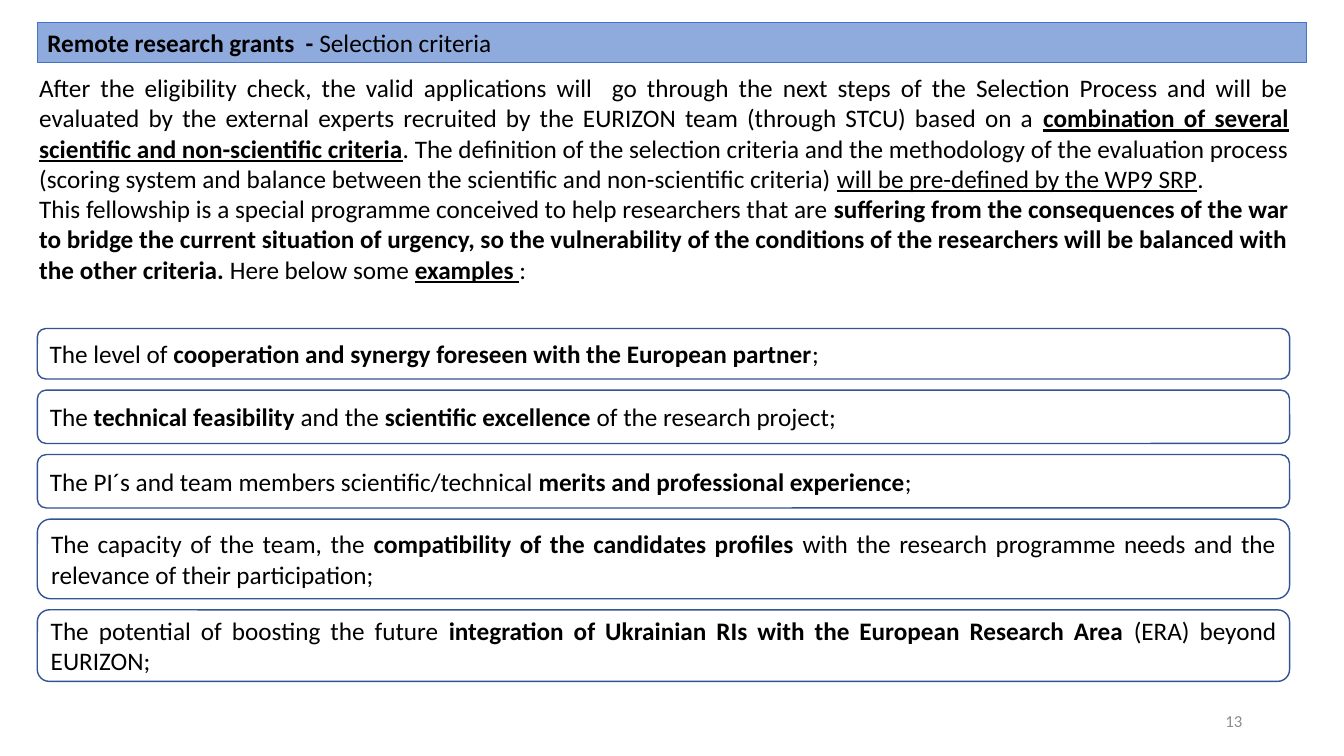
from pptx import Presentation
from pptx.dml.color import RGBColor
from pptx.enum.shapes import MSO_SHAPE
from pptx.enum.text import MSO_ANCHOR as ANCHOR, MSO_AUTO_SIZE as AUTO, PP_ALIGN as ALIGN
from pptx.util import Inches, Pt

BLACK = RGBColor(0x00, 0x00, 0x00)
GREY = RGBColor(0x8C, 0x8C, 0x8C)
BANNER_FILL = RGBColor(0x8F, 0xAA, 0xDC)
BANNER_LINE = RGBColor(0x44, 0x72, 0xC4)
BOX_LINE = RGBColor(0x32, 0x54, 0x91)
FONT = "Calibri"

# Content: each paragraph is a list of (text, style), b = bold, u = underlined
TITLE = [("Remote research grants  - ", "b"), ("Selection criteria", "")]
INTRO = [
    [
        ("After the eligibility check, the valid applications will  go through the next "
         "steps of the Selection Process and will be evaluated by the external experts "
         "recruited by the EURIZON team (through STCU) based on a ", ""),
        ("combination of several scientific and non-scientific criteria", "bu"),
        (". The definition of the selection criteria and the methodology of the "
         "evaluation process (scoring system and balance between the scientific and "
         "non-scientific criteria) ", ""),
        ("will be pre-defined by the WP9 SRP", "u"),
        (". ", ""),
    ],
    [
        ("This fellowship is a special programme conceived to help researchers that are ", ""),
        ("suffering from the consequences of the war to bridge the current situation of "
         "urgency, so the vulnerability of the conditions of the researchers will be "
         "balanced with the other criteria.", "b"),
        (" Here below some ", ""),
        ("examples ", "bu"),
        (": ", ""),
    ],
]
# Criteria: box height, runs
CRITERIA = [
    (0.5, [("The level of ", ""),
           ("cooperation and synergy foreseen with the European partner", "b"),
           (";", "")]),
    (0.53, [("The ", ""), ("technical feasibility ", "b"), ("and the ", ""),
            ("scientific excellence ", "b"), ("of the research project;", "")]),
    (0.53, [("The PI´s and team members scientific/technical ", ""),
            ("merits and professional experience", "b"), (";", "")]),
    (0.79, [("The capacity of the team, the ", ""),
            ("compatibility of the candidates profiles", "b"),
            (" with the research programme needs and the relevance of their "
             "participation;", "")]),
    (0.71, [("The potential of boosting the future ", ""),
            ("integration of Ukrainian RIs with the European Research Area ", "b"),
            ("(ERA) beyond EURIZON;", "")]),
]
PAGE_NUMBER = [("13", "")]

LEFT, FULL_W, BOX_W = 0.37, 12.59, 12.42
BOX_TOP, BOX_GAP = 3.26, 0.11


def write(sp, paragraphs, anchor=ANCHOR.MIDDLE, align=ALIGN.JUSTIFY, size=18, color=BLACK):
    tf = sp.text_frame
    tf.word_wrap = True
    tf.auto_size = AUTO.NONE
    tf.vertical_anchor = anchor
    for i, runs in enumerate(paragraphs):
        p = tf.add_paragraph() if i else tf.paragraphs[0]
        p.alignment = align
        p.line_spacing = 1.0
        for text, style in runs:
            r = p.add_run()
            r.text = text
            r.font.name = FONT
            r.font.size = Pt(size)
            r.font.color.rgb = color
            r.font.bold = "b" in style
            r.font.underline = "u" in style


prs = Presentation()
prs.slide_width, prs.slide_height = Inches(13.33), Inches(7.5)
s = prs.slides.add_slide(prs.slide_layouts[5])

# Title banner
title = s.shapes.title
title.left, title.top = Inches(LEFT), Inches(0.22)
title.width, title.height = Inches(FULL_W), Inches(0.4)
title.fill.solid()
title.fill.fore_color.rgb = BANNER_FILL
title.line.color.rgb = BANNER_LINE
title.line.width = Pt(0.75)
write(title, [TITLE], ANCHOR.TOP)

# Introduction
intro = s.shapes.add_textbox(Inches(0.29), Inches(0.67), Inches(FULL_W), Inches(2.22))
write(intro, INTRO, ANCHOR.TOP)

# Criteria boxes, stacked with an equal gap
top = BOX_TOP
for height, runs in CRITERIA:
    box = s.shapes.add_shape(MSO_SHAPE.ROUNDED_RECTANGLE, Inches(LEFT), Inches(top),
                             Inches(BOX_W), Inches(height))
    box.shadow.inherit = False
    box.fill.background()
    box.line.color.rgb = BOX_LINE
    box.line.width = Pt(1)
    write(box, [runs])
    top += height + BOX_GAP

# Page number
number = s.shapes.add_textbox(Inches(9.42), Inches(6.95), Inches(3), Inches(0.4))
write(number, [PAGE_NUMBER], align=ALIGN.RIGHT, size=12, color=GREY)

prs.save("out.pptx")
